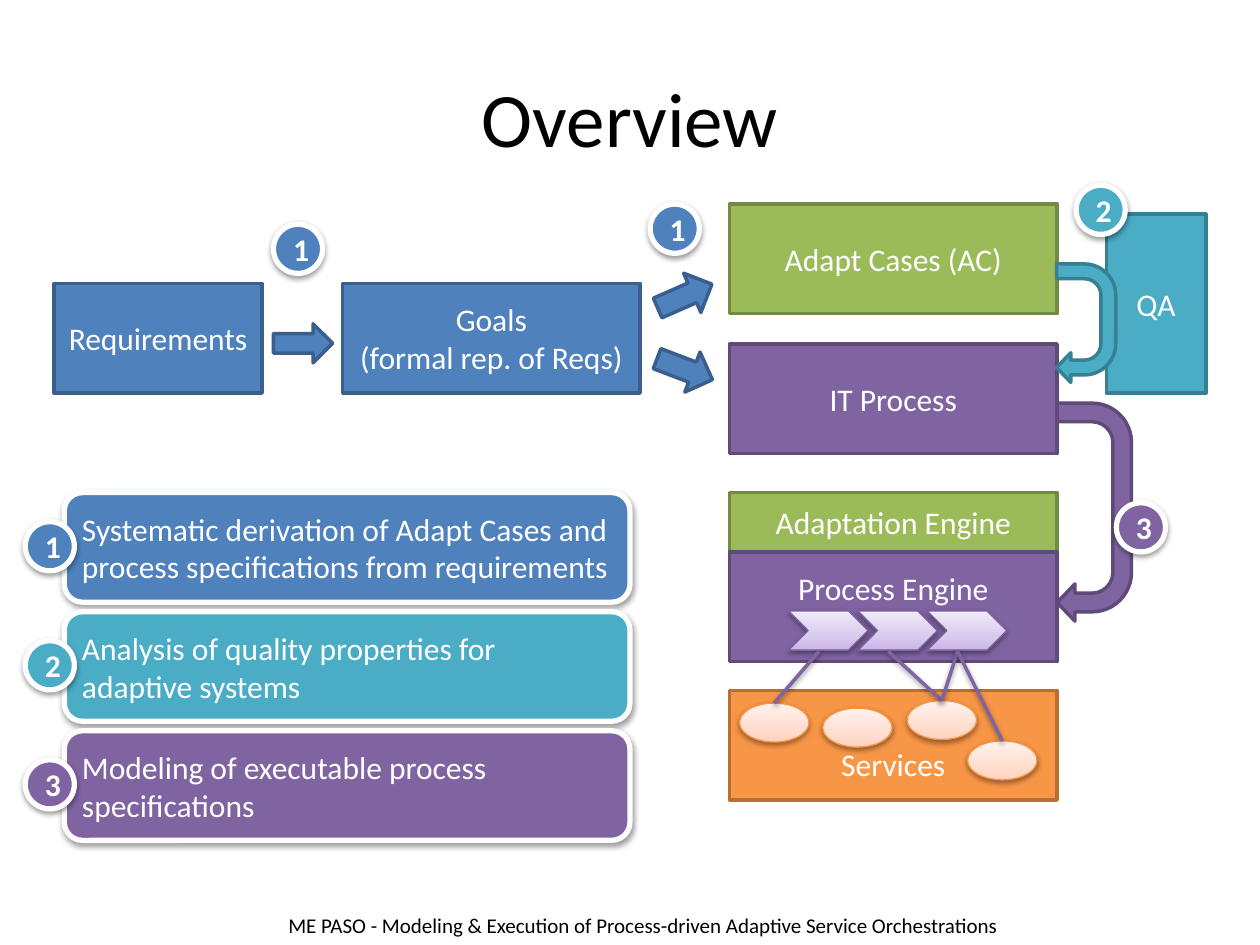
from copy import deepcopy

from lxml.etree import SubElement
from pptx import Presentation
from pptx.dml.color import RGBColor
from pptx.enum.shapes import MSO_CONNECTOR, MSO_SHAPE
from pptx.enum.text import MSO_ANCHOR, PP_ALIGN
from pptx.oxml.ns import qn
from pptx.util import Inches, Pt

COLORS = {
    "white": "FFFFFF", "black": "000000",
    "blue": "4F81BD", "blue edge": "3A5F8C",
    "teal": "4BACC6", "teal edge": "377F92",
    "purple": "8064A2", "purple edge": "5F4A78",
    "green": "9BBB59", "green edge": "738A42",
    "orange": "F79646", "orange edge": "B76F34",
    "peach edge": "F69240", "lilac edge": "7D60A0",
}
GRADIENTS = {
    "peach": ("FFD2BD", "FFDED0", "FFF2ED"),
    "lilac": ("C9B5E8", "D8CBEE", "F0EAF9"),
}
STOPS = (0, 0.35, 1)
STACK_LEFT, STACK_WIDTH, BOX_HEIGHT = 5.79, 2.6, 0.87
BADGE = 0.39
LEGEND_TOP, LEGEND_PITCH = 3.91, 0.945
CHEVRON_LEFT, CHEVRON_TOP, CHEVRON_PITCH = 6.26, 4.85, 0.55
SERVICE_WIDTH, SMALL_HEIGHT = 0.55, 0.31


def rgb(name):
    """Look up a named colour."""
    return RGBColor.from_string(COLORS[name])


def cast_shadow(properties):
    """Give shape properties a soft shadow that falls straight down."""
    effects = properties.find(qn("a:effectLst"))
    if effects is None:
        effects = SubElement(properties, qn("a:effectLst"))
    shadow = SubElement(effects, qn("a:outerShdw"), blurRad=str(Pt(3.1)),
                        dist=str(Pt(1.6)), dir="5400000", rotWithShape="0")
    tint = SubElement(shadow, qn("a:srgbClr"), val=COLORS["black"])
    SubElement(tint, qn("a:alpha"), val="38000")


def write(frame, text, size=18, color="white", align=PP_ALIGN.CENTER, bold=False):
    """Put formatted, vertically centred text in a frame."""
    frame.text = text
    frame.word_wrap = True
    frame.vertical_anchor = MSO_ANCHOR.MIDDLE
    paragraph = frame.paragraphs[0]
    paragraph.alignment = align
    for run in paragraph.runs:
        for name, value in {"name": "Calibri", "size": Pt(size), "bold": bold}.items():
            setattr(run.font, name, value)
        run.font.color.rgb = rgb(color)


def add_figure(slide, kind, box, edge, width, fill=None, shadow=False):
    """Draw an outlined preset shape."""
    figure = slide.shapes.add_shape(kind, *map(Inches, box))
    figure.shadow.inherit = False
    if fill:
        figure.fill.solid()
        figure.fill.fore_color.rgb = rgb(fill)
    figure.line.color.rgb = rgb(edge)
    figure.line.width = Pt(width)
    if shadow:
        cast_shadow(figure._element.spPr)
    return figure


def add_block(slide, text, box, hue, inset=None):
    """Draw a labelled rectangle, with an optional text inset as (side, inches)."""
    block = add_figure(slide, MSO_SHAPE.RECTANGLE, box, f"{hue} edge", 2, hue)
    write(block.text_frame, text)
    if inset:
        setattr(block.text_frame, f"margin_{inset[0]}", Inches(inset[1]))


def add_arrow(slide, kind, box, hue, rotation=0, adjustments=()):
    """Draw a rotated block arrow."""
    arrow = add_figure(slide, kind, box, f"{hue} edge", 2, hue)
    arrow.rotation = rotation
    for index, value in enumerate(adjustments):
        arrow.adjustments[index] = value


def add_badge(slide, number, left, top, hue):
    """Draw a numbered circle."""
    badge = add_figure(slide, MSO_SHAPE.OVAL, (left, top, BADGE, BADGE),
                       "white", 3, hue, True)
    write(badge.text_frame, number, bold=True)


def add_glossy(slide, kind, box, hue):
    """Draw a small shape with an upward gradient."""
    glossy = add_figure(slide, kind, box, f"{hue} edge", 0.75, shadow=True)
    glossy.fill.gradient()
    glossy.fill.gradient_angle = 90
    stop_list = next(glossy._element.spPr.iter(qn("a:gsLst")))
    stop_list.append(deepcopy(stop_list[-1]))
    for stop, position, color in zip(glossy.fill.gradient_stops, STOPS, GRADIENTS[hue]):
        stop.position = position
        stop.color.rgb = RGBColor.from_string(color)
    return glossy


def add_call(slide, step, service):
    """Link the bottom of a process step to the top of a service."""
    start = CHEVRON_LEFT + 0.24 + step * CHEVRON_PITCH, CHEVRON_TOP + 0.32
    call = slide.shapes.add_connector(MSO_CONNECTOR.STRAIGHT, *map(Inches, start),
                                      service.left, service.top)
    call.end_connect(service, 0)
    call.line.color.rgb = rgb("purple")
    call.line.width = Pt(2)
    cast_shadow(call._element.spPr)


def add_legend(slide):
    """List the three numbered topics."""
    topics = (
        ("Systematic derivation of Adapt Cases and process specifications from requirements", "blue"),
        ("Analysis of quality properties for adaptive systems", "teal"),
        ("Modeling of executable process specifications", "purple"),
    )
    for row, (topic, hue) in enumerate(topics):
        top = LEGEND_TOP + row * LEGEND_PITCH
        panel = add_figure(slide, MSO_SHAPE.FLOWCHART_ALTERNATE_PROCESS,
                           (0.51, top, 4.49, BOX_HEIGHT), "white", 3, hue, True)
        write(panel.text_frame, topic, align=PP_ALIGN.LEFT)
        add_badge(slide, str(row + 1), 0.2, top + 0.23, hue)


def add_flow(slide):
    """Draw the blocks, the arrows between them and the badges."""
    stack = (
        ("Adapt Cases (AC)", 1.62, BOX_HEIGHT, "green", None),
        ("IT Process", 2.73, BOX_HEIGHT, "purple", None),
        ("Adaptation Engine", 3.91, 0.47, "green", None),
        ("Process Engine", 4.38, BOX_HEIGHT, "purple", ("bottom", 0.35)),
        ("Services", 5.48, BOX_HEIGHT, "orange", ("top", 0.35)),
    )
    for text, top, height, hue, inset in stack:
        add_block(slide, text, (STACK_LEFT, top, STACK_WIDTH, height), hue, inset)
    add_block(slide, "Requirements", (0.43, 2.25, 1.65, BOX_HEIGHT), "blue")
    add_block(slide, "Goals\v(formal rep. of Reqs)", (2.72, 2.25, 2.36, BOX_HEIGHT), "blue")
    add_block(slide, "QA", (8.78, 1.7, 0.79, 1.42), "teal")
    for box, rotation in (((2.17, 2.57, 0.47, 0.31), 0),
                          ((5.2, 2.18, 0.47, 0.34), 336.3),
                          ((5.2, 2.76, 0.47, 0.34), 20.8)):
        add_arrow(slide, MSO_SHAPE.RIGHT_ARROW, box, "blue", rotation)
    for box, hue in (((7.82, 3.77, 1.73, 0.59), "purple"),
                     ((8.15, 2.33, 0.94, 0.47), "teal")):
        add_arrow(slide, MSO_SHAPE.U_TURN_ARROW, box, hue, 90, (0.25, 0.25, 0.24, 0.53, 1))
    for badge in (("1", 2.17, 1.78, "blue"), ("1", 5.16, 1.62, "blue"),
                  ("2", 8.54, 1.47, "teal"), ("3", 8.86, 3.99, "purple")):
        add_badge(slide, *badge)


def add_orchestration(slide):
    """Draw the process steps, the services and the calls between them."""
    spots = ((5.87, 5.58), (6.53, 5.62), (7.2, 5.56), (7.68, 5.88))
    services = [add_glossy(slide, MSO_SHAPE.OVAL, (*spot, SERVICE_WIDTH, SMALL_HEIGHT), "peach")
                for spot in spots]
    for step in range(3):
        left = CHEVRON_LEFT + step * CHEVRON_PITCH
        add_glossy(slide, MSO_SHAPE.CHEVRON, (left, CHEVRON_TOP, 0.63, SMALL_HEIGHT), "lilac")
    for step, service in ((0, 0), (1, 2), (2, 2), (2, 3)):
        add_call(slide, step, services[service])


def main():
    """Build the overview slide."""
    deck = Presentation()
    deck.slide_width, deck.slide_height = Inches(10), Inches(7.5)
    slide = deck.slides.add_slide(deck.slide_layouts[5])
    title = slide.shapes.title
    title.left, title.top, title.width, title.height = map(Inches, (0.5, 0.3, 9, 1.25))
    write(title.text_frame, "Overview", 44, "black")
    footer = slide.shapes.add_textbox(*map(Inches, (1.52, 7.14, 7.17, 0.4)))
    write(footer.text_frame,
          "ME PASO - Modeling & Execution of Process-driven Adaptive Service Orchestrations",
          12, "black")
    add_flow(slide)
    add_orchestration(slide)
    add_legend(slide)
    deck.save("out.pptx")


if __name__ == "__main__":
    main()
